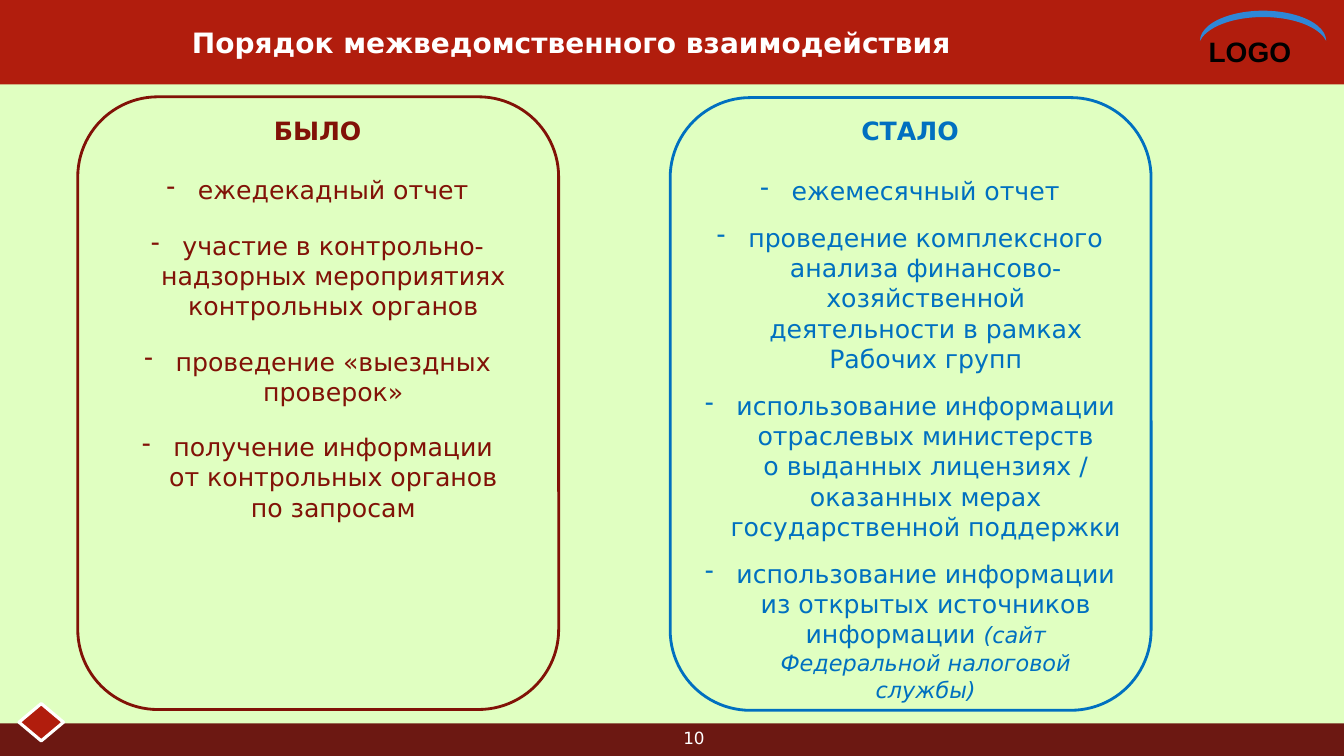
from lxml import etree
from pptx import Presentation, util as u
from pptx.dml import color
from pptx.enum import shapes, text
from pptx.oxml import ns

KIND = shapes.MSO_SHAPE
FONT = "DejaVu Sans"
WHITE, RED, WINE, BLUE = "FFFFFF", "B11D0D", "811207", "0070C0"
WIDE, HIGH = 33.87, 19.05


def tint(code):
    """Turn a hex string into a colour."""
    return color.RGBColor.from_string(code)


def shape(slide, kind, box, fill=None, line=None, width=2):
    """Draw one preset shape in a box given in centimetres."""
    item = slide.shapes.add_shape(kind, *map(u.Cm, box))
    item.shadow.inherit = False
    if fill:
        item.fill.solid()
        item.fill.fore_color.rgb = tint(fill)
    else:
        item.fill.background()
    if line:
        item.line.color.rgb = tint(line)
        item.line.width = u.Pt(width)
    else:
        item.line.fill.background()
    return item


def frame(slide, box):
    """Add a wrapping text box and return its text frame."""
    area = slide.shapes.add_textbox(*map(u.Cm, box)).text_frame
    area.word_wrap = True
    return area


def write(para, words, size, code, bold=False, slant=False, face=FONT):
    """Add words to a paragraph, with a line break at each newline."""
    for num, part in enumerate(words.split("\n")):
        if num:
            para.add_line_break()
        run = para.add_run()
        run.text = part
        font = run.font
        font.size, font.name = u.Pt(size), face
        font.bold, font.italic = bold, slant
        font.color.rgb = tint(code)


def dash(para):
    """Give a paragraph a hanging dash."""
    props = para._p.get_or_add_pPr()
    props.set("marL", str(u.Cm(0.79)))
    props.set("indent", str(u.Cm(-0.79)))
    etree.SubElement(props, ns.qn("a:buChar")).set("char", "-")


def header(slide, box, title):
    """Draw the top band with its title and corner mark."""
    left, top, wide, high = box
    shape(slide, KIND.RECTANGLE, box, RED)
    area = frame(slide, (left, top, 28.8, high))
    area.vertical_anchor = text.MSO_ANCHOR.MIDDLE
    para = area.paragraphs[0]
    para.alignment = text.PP_ALIGN.CENTER
    write(para, title, 20, WHITE, True)
    edge = left + wide
    mark = frame(slide, (edge - 3.66, top + 0.74, 3.66, 1.12))
    write(mark.paragraphs[0], "LOGO", 20, "000000", True, face="Arial")
    moon = shape(slide, KIND.MOON, (edge - 2.42, top - 0.94, 0.76, 3.18), "2F87D7")
    moon.adjustments[0] = 0.21
    moon.rotation = 90


def footer(slide, box, page):
    """Draw the bottom band with its diamond and page number."""
    left, top, wide, high = box
    shape(slide, KIND.RECTANGLE, box, "6C1812")
    shape(slide, KIND.DIAMOND, (left + 0.48, top - 0.5, 1.12, 0.94), RED, WHITE, 2.25)
    para = frame(slide, (left + 13.54, top - 0.02, 7.9, 0.66)).paragraphs[0]
    para.alignment = text.PP_ALIGN.CENTER
    write(para, page, 12, WHITE)


def panel(slide, box, code, head, gap, items):
    """Draw a rounded panel with a heading and dashed items."""
    left, top, wide, high = box
    shape(slide, KIND.ROUNDED_RECTANGLE, box, line=code)
    area = frame(slide, (left + 0.48, top + 0.33, wide - 0.99, high - 0.99))
    para = area.paragraphs[0]
    para.alignment = text.PP_ALIGN.CENTER
    para.space_after = u.Pt(21)
    write(para, head, 18, code, True)
    for words, *note in items:
        para = area.add_paragraph()
        para.alignment = text.PP_ALIGN.CENTER
        para.space_after = u.Pt(gap)
        dash(para)
        write(para, words, 18, code)
        for extra in note:
            write(para, extra, 16, code, slant=True)


def main():
    """Build the slide and save it."""
    deck = Presentation()
    deck.slide_width, deck.slide_height = u.Cm(WIDE), u.Cm(HIGH)
    slide = deck.slides.add_slide(deck.slide_layouts[6])
    back = slide.background.fill
    back.solid()
    back.fore_color.rgb = tint("E0FFC1")
    header(slide, (0, 0, WIDE, 2.13), "Порядок межведомственного взаимодействия")
    footer(slide, (0, 18.23, WIDE, 0.82), "10")
    panel(slide, (1.96, 2.44, 12.12, 15.44), WINE, "БЫЛО", 18, [
        ("ежедекадный отчет",),
        ("участие в контрольно-надзорных мероприятиях контрольных органов",),
        ("проведение «выездных проверок»",),
        ("получение информации\nот контрольных органов\nпо запросам",),
    ])
    panel(slide, (16.89, 2.46, 12.12, 15.44), BLUE, "СТАЛО", 12, [
        ("ежемесячный отчет",),
        ("проведение комплексного анализа финансово-хозяйственной "
         "деятельности в рамках Рабочих групп",),
        ("использование информации отраслевых министерств\n"
         "о выданных лицензиях / оказанных мерах государственной поддержки",),
        ("использование информации из открытых источников информации ",
         "(сайт Федеральной налоговой службы)"),
    ])
    deck.save("out.pptx")


if __name__ == "__main__":
    main()
